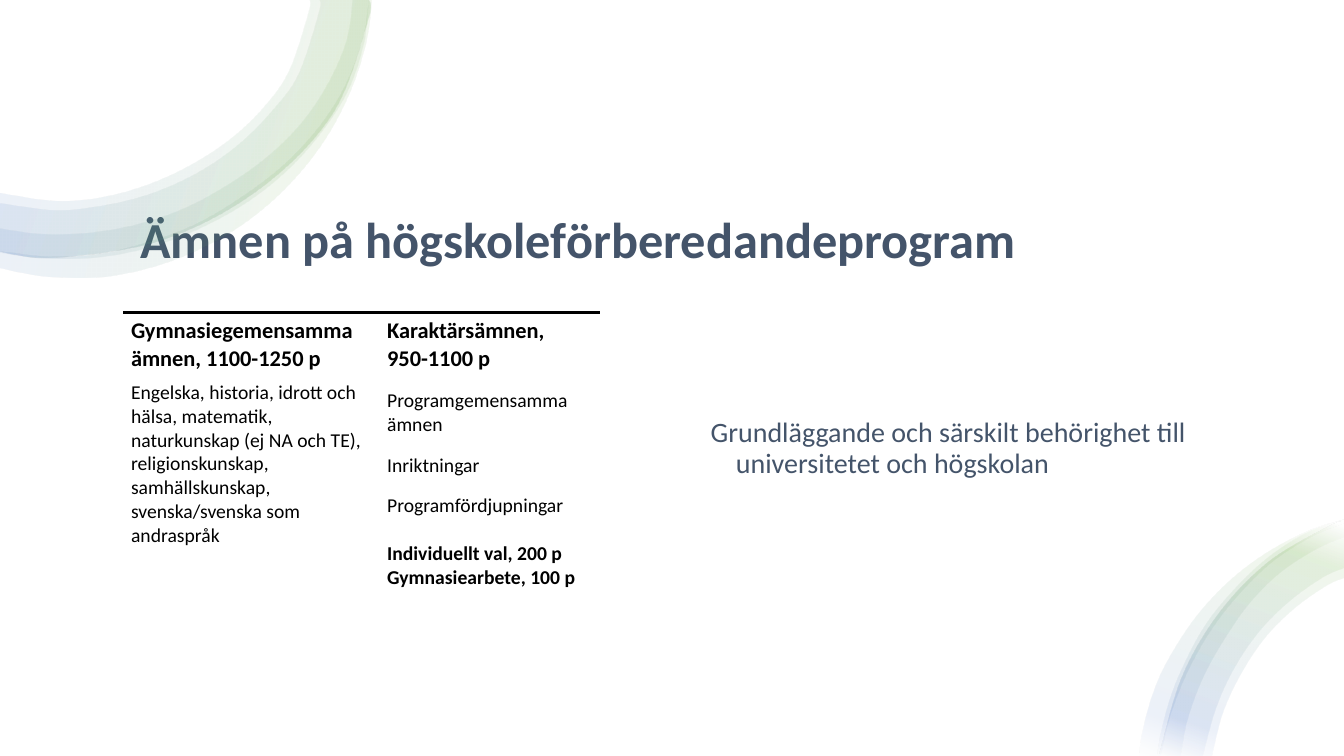
import pptx
import pptx.util
import pptx.dml.color
import pptx.enum.shapes
import pptx.enum.text
import pptx.oxml
import pptx.oxml.ns

Inches, Pt = pptx.util.Inches, pptx.util.Pt
ALIGN, ANCHOR = pptx.enum.text.PP_ALIGN, pptx.enum.text.MSO_ANCHOR
qn, NAMESPACE = pptx.oxml.ns.qn, pptx.oxml.ns.nsdecls("a")
FONT = "Calibri"
PLAIN_TABLE_STYLE = "{2D5ABB26-0587-4C30-8999-92F81FD0307C}"
COLORS = {"heading": "44546A", "text": "000000", "green": "70AD47", "blue": "4472C4", "white": "FFFFFF"}

# Content: paragraphs are (text, size, bold, space before)
TITLE = "Ämnen på högskoleförberedandeprogram"
ELIGIBILITY = "Grundläggande och särskilt behörighet till universitetet och högskolan"
SUBJECTS = [
    [
        ("Gymnasiegemensamma\vämnen, 1100-1250 p", 16, True, 0),
        ("Engelska, historia, idrott och hälsa, matematik, naturkunskap (ej NA och TE), "
         "religionskunskap, samhällskunskap, svenska/svenska som andraspråk", 14, False, 6),
    ],
    [
        ("Karaktärsämnen,", 16, True, 0),
        ("950-1100 p", 16, True, 0),
        ("Programgemensamma ämnen", 14, False, 12),
        ("Inriktningar", 14, False, 12),
        ("Programfördjupningar", 14, False, 12),
        ("Individuellt val, 200 p", 14, True, 17),
        ("Gymnasiearbete, 100 p", 14, True, 0),
    ],
]
COLUMN_WIDTHS, ROW_HEIGHTS = [2.54, 2.19], [3.16, 0.36]

# Corner rings: each band is an outer edge and an inner edge, as points on smooth curves
TOP_OUTER = [(3.66, 0), (3.65, 0.21), (3.3, 1.13), (2.58, 1.87), (1.63, 2.37), (0.56, 2.55), (0, 2.49)]
TOP_BANDS = [
    (TOP_OUTER,
     [(0, 1.91), (0.56, 1.99), (1.03, 1.95), (1.49, 1.82), (1.92, 1.62), (2.31, 1.36),
      (2.63, 1.05), (2.87, 0.7), (3.06, 0.13), (3.07, 0)]),
    (TOP_OUTER,
     [(0, 2.01), (0.56, 2.08), (1.05, 2.03), (1.52, 1.91), (1.98, 1.7), (2.37, 1.43), (2.7, 1.1),
      (2.96, 0.74), (3.16, 0.14), (3.17, 0)]),
    ([(3.66, 0), (3.61, 0.44), (3.45, 0.91), (3.17, 1.34), (2.83, 1.71), (2.43, 2.02), (1.97, 2.27),
      (1.49, 2.45), (0.97, 2.55), (0.44, 2.56), (0, 2.5)],
     [(0, 2.26), (0.45, 2.32), (0.93, 2.3), (1.41, 2.21), (1.86, 2.05), (2.28, 1.82), (2.67, 1.54),
      (3, 1.21), (3.26, 0.82), (3.44, 0.4), (3.5, 0)]),
    ([(3.68, 0), (3.63, 0.4), (3.48, 0.88), (3.24, 1.35), (2.92, 1.77), (2.52, 2.14), (2.06, 2.43),
      (1.54, 2.64), (0.99, 2.75), (0.43, 2.74), (0, 2.66)],
     [(0, 2.49), (0.45, 2.54), (0.96, 2.52), (1.46, 2.4), (1.94, 2.22), (2.38, 1.96), (2.79, 1.65),
      (3.14, 1.28), (3.41, 0.86), (3.59, 0.38), (3.65, 0)]),
]
BOTTOM_OUTER = [(13.33, 5.17), (13.17, 5.22), (12.58, 5.57), (12.09, 6.08), (11.73, 6.7),
                (11.52, 7.41), (11.51, 7.5)]
BOTTOM_BANDS = [
    ([(13.33, 5.15), (12.98, 5.26), (12.56, 5.48), (12.18, 5.77), (11.85, 6.13), (11.58, 6.55),
      (11.43, 6.89), (11.33, 7.26), (11.3, 7.5)],
     [(11.51, 7.5), (11.61, 7.09), (11.78, 6.66), (12.01, 6.25), (12.29, 5.89), (12.62, 5.57),
      (13.01, 5.32), (13.33, 5.19)]),
    (BOTTOM_OUTER,
     [(12.02, 7.5), (12.13, 7.07), (12.31, 6.68), (12.55, 6.32), (12.84, 6.03), (13.15, 5.81),
      (13.33, 5.73)]),
    ([(13.33, 5.16), (12.96, 5.29), (12.58, 5.53), (12.24, 5.85), (11.95, 6.21), (11.73, 6.62),
      (11.6, 6.95), (11.51, 7.3), (11.48, 7.5)],
     [(11.71, 7.5), (11.78, 7.14), (11.93, 6.73), (12.14, 6.35), (12.39, 5.99), (12.69, 5.69),
      (13.04, 5.46), (13.33, 5.33)]),
    (BOTTOM_OUTER,
     [(11.93, 7.5), (12.06, 7.03), (12.24, 6.63), (12.49, 6.26), (12.79, 5.96), (13.11, 5.73),
      (13.33, 5.63)]),
]
GRADIENT_STOPS = [(2, "white"), (16, "green"), (85, "blue"), (100, "white")]
OPACITY = 10


def set_attributes(target, values):
    for name, value in values.items():
        setattr(target, name, value)


def rgb(color):
    return pptx.dml.color.RGBColor.from_string(COLORS[color])


def write_paragraph(paragraph, text, size, bold, color, **layout):
    paragraph.text = text
    set_attributes(paragraph, {"alignment": ALIGN.LEFT, **layout})
    for run in paragraph.runs:
        set_attributes(run.font, {"name": FONT, "size": Pt(size), "bold": bold})
        run.font.color.rgb = rgb(color)


def bezier_segments(points):
    """Control points and end of each cubic piece of a smooth curve through the points."""
    padded = [points[0], *points, points[-1]]
    for a, b, c, d in zip(padded, padded[1:], padded[2:], padded[3:]):
        yield ([q + (r - p) / 6 for p, q, r in zip(a, b, c)],
               [r - (s - q) / 6 for q, r, s in zip(b, c, d)], c)


def add_ring(slide, bands, angle):
    group = slide.shapes.add_group_shape()
    stops = "".join(
        f'<a:gs pos="{position * 1000}"><a:srgbClr val="{COLORS[color]}">'
        f'<a:alpha val="{OPACITY * 1000}"/></a:srgbClr></a:gs>' for position, color in GRADIENT_STOPS)
    for edges in bands:
        outline = [(Inches(x), Inches(y)) for edge in edges for x, y in edge]
        builder = group.shapes.build_freeform(*outline[0])
        builder.add_line_segments(outline[1:], close=True)
        band = builder.convert_to_shape()
        band.shadow.inherit = False
        band.line.fill.background()
        band.fill.background()
        properties = band._element.spPr
        properties.replace(properties.find(qn("a:noFill")), pptx.oxml.parse_xml(
            f'<a:gradFill {NAMESPACE} rotWithShape="1"><a:gsLst>{stops}</a:gsLst>'
            f'<a:lin ang="{angle * 60000}" scaled="0"/></a:gradFill>'))
        # Round the straight pieces; the one joining the two edges stays straight
        lines = list(properties.iter(qn("a:lnTo")))
        split = len(edges[0]) - 1
        for edge, pieces in zip(edges, (lines[:split], lines[split + 1:])):
            for line, segment in zip(pieces, bezier_segments(edge)):
                points = "".join(f'<a:pt x="{Inches(x) - band.left}" y="{Inches(y) - band.top}"/>'
                                 for x, y in segment)
                line.getparent().replace(line, pptx.oxml.parse_xml(
                    f'<a:cubicBezTo {NAMESPACE}>{points}</a:cubicBezTo>'))


presentation = pptx.Presentation()
set_attributes(presentation, {"slide_width": Inches(13.33), "slide_height": Inches(7.5)})
slide = presentation.slides.add_slide(presentation.slide_layouts[5])
title = slide.shapes.title

# White panel behind everything
panel = slide.shapes.add_shape(pptx.enum.shapes.MSO_SHAPE.RECTANGLE, 0, 0,
                               presentation.slide_width, presentation.slide_height)
panel.shadow.inherit = False
panel.fill.solid()
panel.fill.fore_color.rgb = rgb("white")
panel.line.fill.background()
title._element.addprevious(panel._element)

# Title
set_attributes(title, {"left": Inches(1.29), "top": Inches(1.27),
                       "width": Inches(10.75), "height": Inches(1.45)})
set_attributes(title.text_frame, {"vertical_anchor": ANCHOR.BOTTOM, "word_wrap": True})
write_paragraph(title.text_frame.paragraphs[0], TITLE, 36, True, "heading", line_spacing=0.9)

add_ring(slide, TOP_BANDS, 200)

# Eligibility text with a hanging indent
eligibility = slide.shapes.add_textbox(Inches(6.95), Inches(3.09), Inches(5.5), Inches(3.53))
set_attributes(eligibility.text_frame, {"vertical_anchor": ANCHOR.MIDDLE, "word_wrap": True,
                                        "margin_bottom": Inches(0.85)})
paragraph = eligibility.text_frame.paragraphs[0]
write_paragraph(paragraph, ELIGIBILITY, 20, False, "heading", line_spacing=0.9)
indent = Inches(0.25)
for name, value in {"marL": indent, "indent": -indent}.items():
    paragraph._p.get_or_add_pPr().set(name, str(value))

add_ring(slide, BOTTOM_BANDS, 110)

# Subject table with a rule along its top
frame = slide.shapes.add_table(len(ROW_HEIGHTS), len(COLUMN_WIDTHS), Inches(1.22), Inches(3.1),
                               Inches(sum(COLUMN_WIDTHS)), Inches(sum(ROW_HEIGHTS)))
table = frame.table
set_attributes(table, {"first_row": False, "horz_banding": False})
table._tbl.tblPr.find(qn("a:tableStyleId")).text = PLAIN_TABLE_STYLE
for column, width in zip(table.columns, COLUMN_WIDTHS):
    column.width = Inches(width)
for row, height in zip(table.rows, ROW_HEIGHTS):
    row.height = Inches(height)
for cell in table.iter_cells():
    cell.fill.background()
    set_attributes(cell, {"margin_left": Inches(0.08), "margin_right": Inches(0.08),
                          "margin_top": 0, "margin_bottom": 0})
for cell, lines in zip(table.rows[0].cells, SUBJECTS):
    set_attributes(cell, {"margin_top": Inches(0.05), "margin_bottom": Inches(0.05)})
    cell._tc.get_or_add_tcPr().insert(0, pptx.oxml.parse_xml(
        f'<a:lnT {NAMESPACE} w="{Pt(2.25)}"><a:solidFill>'
        f'<a:srgbClr val="{COLORS["text"]}"/></a:solidFill></a:lnT>'))
    for index, (text, size, bold, before) in enumerate(lines):
        paragraph = cell.text_frame.add_paragraph() if index else cell.text_frame.paragraphs[0]
        write_paragraph(paragraph, text, size, bold, "text", space_before=Pt(before))

presentation.save("out.pptx")
